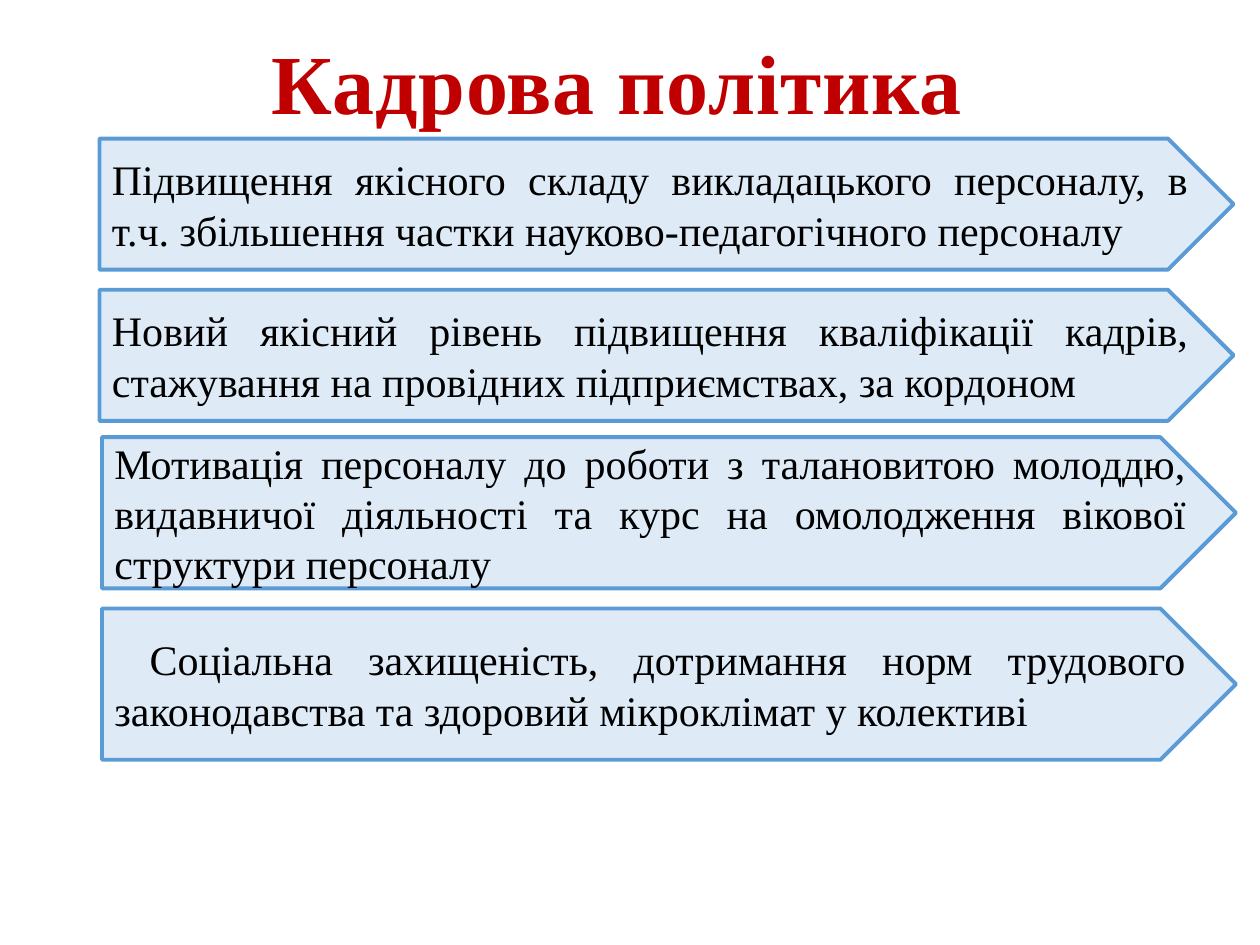
"""Build the personnel policy slide with four arrow-shaped statements."""
from dataclasses import dataclass

from pptx import Presentation
from pptx.dml.color import RGBColor
from pptx.enum.shapes import MSO_SHAPE
from pptx.enum.text import MSO_ANCHOR, MSO_AUTO_SIZE, PP_ALIGN
from pptx.util import Inches, Pt


@dataclass(frozen=True)
class Theme:
    font: str = "Times New Roman"
    title_size: Pt = Pt(48)
    body_size: Pt = Pt(24)
    line_width: Pt = Pt(2.25)
    title: RGBColor = RGBColor(0xC0, 0x00, 0x00)
    body: RGBColor = RGBColor(0x00, 0x00, 0x00)
    fill: RGBColor = RGBColor(0xDE, 0xEB, 0xF7)
    line: RGBColor = RGBColor(0x5B, 0x9B, 0xD5)


def format_run(run, size, color, bold=False):
    run.font.name = theme.font
    run.font.size = size
    run.font.color.rgb = color
    run.font.bold = bold


theme = Theme()
presentation = Presentation()
presentation.slide_width = Inches(10)
presentation.slide_height = Inches(7.5)
slide = presentation.slides.add_slide(presentation.slide_layouts[5])

title = slide.shapes.title
title.left, title.top = Inches(2.04), Inches(0.19)
title.width, title.height = Inches(5.92), Inches(0.91)
title_frame = title.text_frame
title_frame.text = "Кадрова політика"
title_frame.word_wrap = False
title_frame.auto_size = MSO_AUTO_SIZE.SHAPE_TO_FIT_TEXT
title_frame.vertical_anchor = MSO_ANCHOR.TOP
title_frame.margin_right = Inches(0.3)
title_paragraph = title_frame.paragraphs[0]
title_paragraph.alignment = PP_ALIGN.CENTER
title_run = title_paragraph.runs[0]
format_run(title_run, theme.title_size, theme.title, bold=True)
title_run.font._element.set("spc", "50")

statements = [
    (0.79, 1.1, 1.04, 0,
     "Підвищення якісного складу викладацького персоналу, "
     "в т.ч. збільшення частки науково-педагогічного персоналу"),
    (0.79, 2.3, 1.04, 0,
     "Новий якісний рівень підвищення кваліфікації кадрів, "
     "стажування на провідних підприємствах, за кордоном"),
    (0.81, 3.47, 1.2, 0,
     "Мотивація персоналу до роботи з талановитою молоддю, видавничої "
     "діяльності та курс на омолодження вікової структури персоналу"),
    (0.81, 4.83, 1.2, 0.28,
     "Соціальна захищеність, дотримання норм трудового "
     "законодавства та здоровий мікроклімат у колективі"),
]

for left, top, height, indent, statement in statements:
    arrow = slide.shapes.add_shape(
        MSO_SHAPE.PENTAGON, Inches(left), Inches(top), Inches(9), Inches(height))
    arrow.shadow.inherit = False
    arrow.fill.solid()
    arrow.fill.fore_color.rgb = theme.fill
    arrow.line.color.rgb = theme.line
    arrow.line.width = theme.line_width
    text_frame = arrow.text_frame
    text_frame.text = statement
    text_frame.word_wrap = True
    text_frame.vertical_anchor = MSO_ANCHOR.MIDDLE
    paragraph = text_frame.paragraphs[0]
    paragraph.alignment = PP_ALIGN.JUSTIFY
    if indent:
        paragraph._p.get_or_add_pPr().set("indent", str(Inches(indent)))
    format_run(paragraph.runs[0], theme.body_size, theme.body)

presentation.save("out.pptx")
